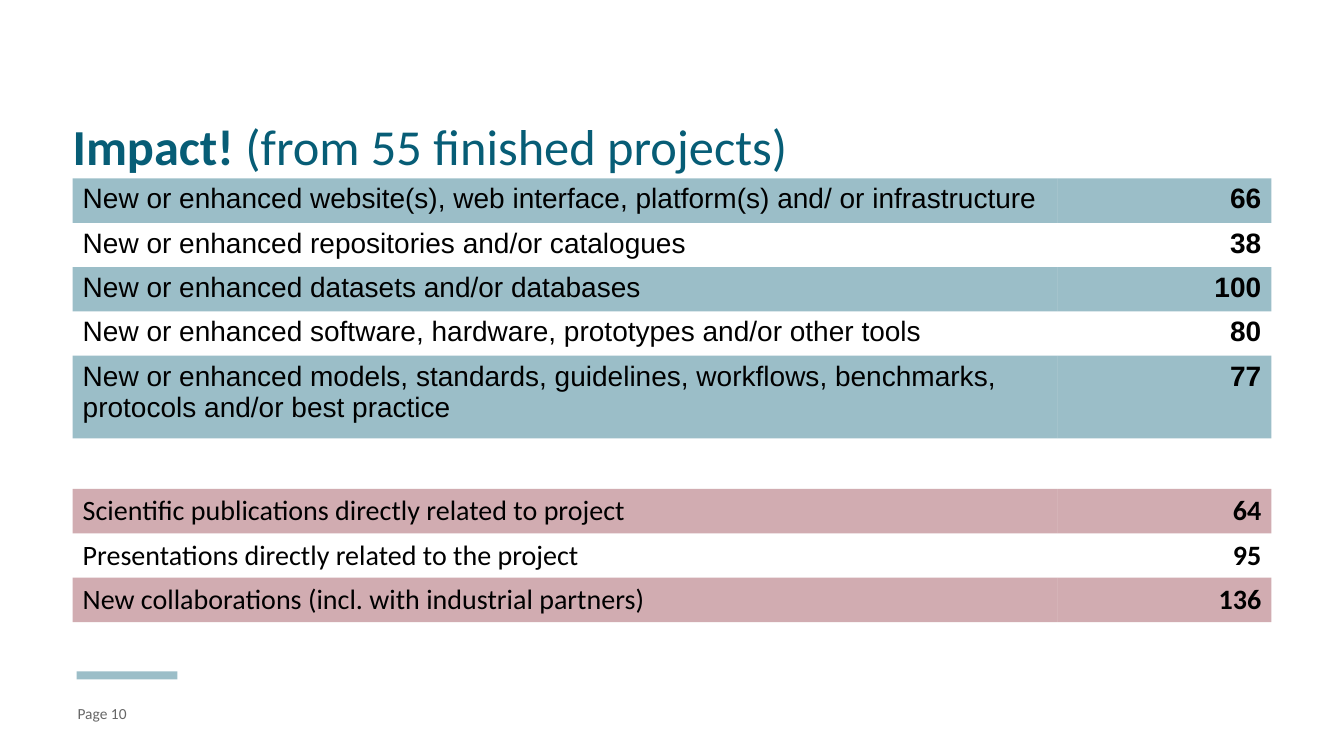
from lxml import etree
from pptx import Presentation
from pptx.dml.color import RGBColor
from pptx.enum.shapes import MSO_SHAPE
from pptx.enum.text import MSO_ANCHOR, MSO_AUTO_SIZE, PP_ALIGN
from pptx.oxml.ns import qn
from pptx.util import Inches, Pt

TEAL = RGBColor(0x07, 0x5D, 0x76)
WINE = RGBColor(0x8C, 0x31, 0x3D)
PALE = RGBColor(0x9C, 0xBE, 0xC8)
GREY = RGBColor(0x66, 0x66, 0x66)
BLACK = RGBColor(0, 0, 0)

PLAIN_STYLE = "{2D5ABB26-0587-4C30-8999-92F81FD0307C}"
COLS = (9.77, 2.12)
ROW = 0.44

OUTPUTS = [
    ("New or enhanced website(s), web interface, platform(s) and/ or infrastructure", 66),
    ("New or enhanced repositories and/or catalogues", 38),
    ("New or enhanced datasets and/or databases", 100),
    ("New or enhanced software, hardware, prototypes and/or other tools", 80),
    ("New or enhanced models, standards, guidelines, workflows, benchmarks, "
     "protocols and/or best practice", 77),
]
REACH = [
    ("Scientific publications directly related to project", 64),
    ("Presentations directly related to the project", 95),
    ("New collaborations (incl. with industrial partners)", 136),
]


def style(font, color, **values):
    for name, value in values.items():
        setattr(font, name, value)
    font.color.rgb = color


def set_frame(frame, spacing, left=0):
    values = dict(margin_left=Inches(left), margin_top=0, margin_right=0,
                  margin_bottom=0, word_wrap=True,
                  vertical_anchor=MSO_ANCHOR.TOP, auto_size=MSO_AUTO_SIZE.NONE)
    for name, value in values.items():
        setattr(frame, name, value)
    line = frame.paragraphs[0]
    line.alignment = PP_ALIGN.LEFT
    line.line_spacing = spacing
    return line


def add_title(slide, left, top, width, height):
    title = slide.shapes.title
    title.left, title.top = Inches(left), Inches(top)
    title.width, title.height = Inches(width), Inches(height)
    line = set_frame(title.text_frame, 2.22)
    for text, bold in (("Impact! ", True), ("(from 55 finished projects)", False)):
        run = line.add_run()
        run.text = text
        style(run.font, TEAL, name="Calibri", size=Pt(36), bold=bold)


def tint(cell, color):
    """Fill a cell with the colour at 40 % opacity."""
    cell.fill.solid()
    cell.fill.fore_color.rgb = color
    shade = cell.fill._xPr.find(qn("a:solidFill"))[0]
    etree.SubElement(shade, qn("a:alpha"), val="40000")


def add_counts(slide, left, top, rows, heights, color, face):
    """Place a two-column table of topics and counts, tinting every other row."""
    table = slide.shapes.add_table(
        len(rows), len(COLS), Inches(left), Inches(top),
        Inches(sum(COLS)), Inches(sum(heights))).table
    table.first_row = table.horz_banding = False
    table._tbl.tblPr.find(qn("a:tableStyleId")).text = PLAIN_STYLE
    for column, width in zip(table.columns, COLS):
        column.width = Inches(width)
    for i, (row, height) in enumerate(zip(rows, heights)):
        table.rows[i].height = Inches(height)
        for j, value in enumerate(row):
            cell = table.cell(i, j)
            if i % 2:
                cell.fill.background()
            else:
                tint(cell, color)
            line = cell.text_frame.paragraphs[0]
            line.alignment = PP_ALIGN.RIGHT if j else PP_ALIGN.LEFT
            run = line.add_run()
            run.text = str(value)
            style(run.font, BLACK, name=face, size=Pt(20), bold=j == 1)


def add_footer(slide, left, top):
    bar = slide.shapes.add_shape(MSO_SHAPE.RECTANGLE, Inches(left + 0.03),
                                 Inches(top), Inches(1), Inches(0.08))
    bar.shadow.inherit = False
    bar.fill.solid()
    bar.fill.fore_color.rgb = PALE
    bar.line.fill.background()
    page = slide.shapes.add_textbox(Inches(left), Inches(top + 0.24),
                                    Inches(0.67), Inches(0.4))
    run = set_frame(page.text_frame, 1.45, 0.04).add_run()
    run.text = "Page 10"
    style(run.font, GREY, name="Calibri", size=Pt(11))


def main():
    deck = Presentation()
    deck.slide_width, deck.slide_height = Inches(13.33), Inches(7.5)
    slide = deck.slides.add_slide(deck.slide_layouts[5])
    add_footer(slide, 0.73, 6.66)
    add_title(slide, 0.72, 0.41, 11.89, 1.26)
    add_counts(slide, 0.72, 1.77, OUTPUTS, [ROW] * 4 + [0.82], TEAL, "Arial")
    add_counts(slide, 0.72, 4.85, REACH, [ROW] * 3, WINE, "Calibri")
    deck.save("out.pptx")


if __name__ == "__main__":
    main()
